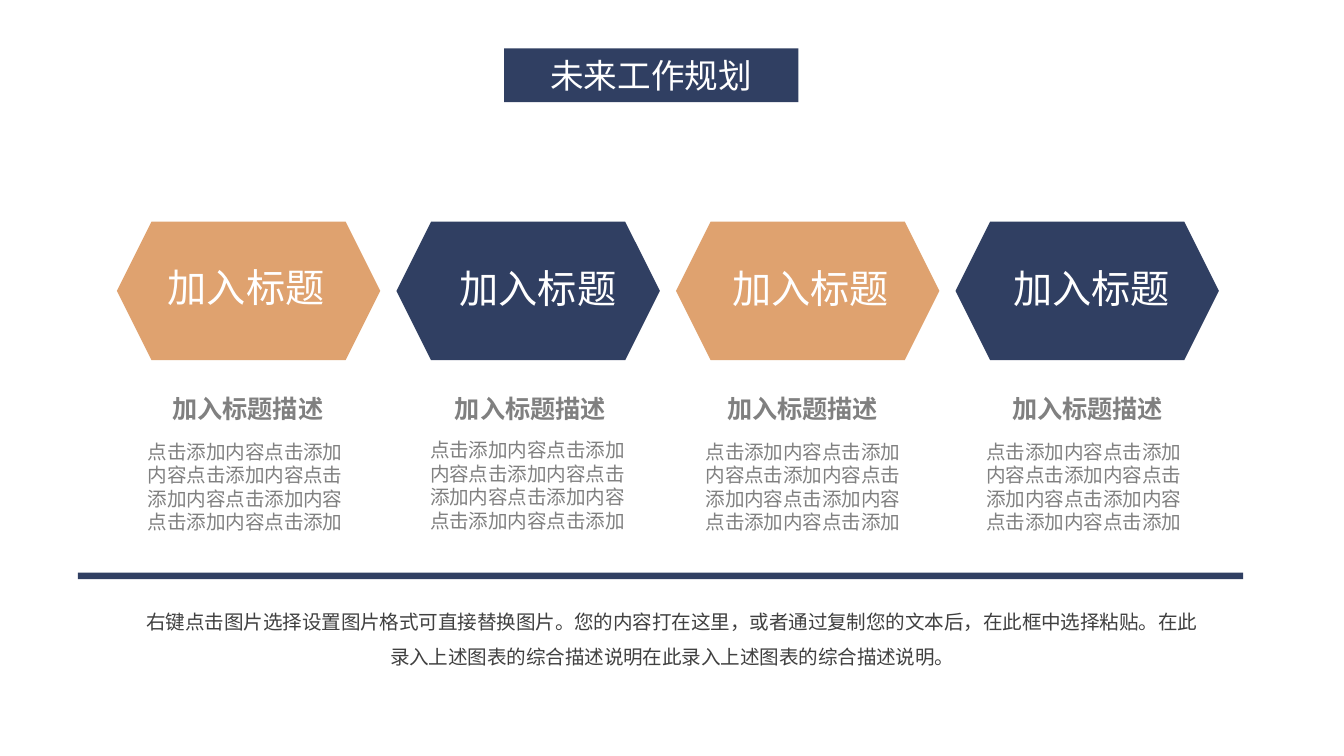
from lxml import etree
from pptx import Presentation
from pptx.dml.color import RGBColor
from pptx.enum.shapes import MSO_SHAPE
from pptx.enum.text import MSO_ANCHOR, MSO_AUTO_SIZE, PP_ALIGN
from pptx.oxml.ns import qn
from pptx.util import Inches, Pt

RECTANGLE, HEXAGON = MSO_SHAPE.RECTANGLE, MSO_SHAPE.HEXAGON
TOP, MIDDLE = MSO_ANCHOR.TOP, MSO_ANCHOR.MIDDLE
LEFT, CENTER = PP_ALIGN.LEFT, PP_ALIGN.CENTER
NO_AUTOFIT = MSO_AUTO_SIZE.NONE

COLORS = {
    "navy": "303F62",
    "orange": "DFA26F",
    "white": "FFFFFF",
    "gray": "808080",
    "dark": "404040",
}
CJK_FONT = "Noto Sans CJK SC"

SLIDE_WIDTH = 10
SLIDE_HEIGHT = SLIDE_WIDTH * 9 / 16

STEP_COUNT = 4
STEP_LEFT, STEP_PITCH = 0.87, 2.08
STEP_FILLS = ("orange", "navy")
LABEL_SPOTS = ((1.15, 1.91), (3.32, 1.92), (5.35, 1.92), (7.44, 1.92))
HEADING_SPANS = ((0.99, 1.71), (2.49, 2.91), (4.5, 2.94), (7.17, 1.84))
DETAIL_SPOTS = ((0.92, 3.2), (3.02, 3.19), (5.07, 3.2), (7.16, 3.2))

TITLE = "未来工作规划"
LABEL = "加入标题"
HEADING = "加入标题描述"
DETAIL = "点击添加内容" * 6 + "点击添加"
SUMMARY = (
    "右键点击图片选择设置图片格式可直接替换图片。"
    "您的内容打在这里，或者通过复制您的文本后，在此框中选择粘贴。"
    "在此录入上述图表的综合描述说明在此录入上述图表的综合描述说明。"
)


def write_text(frame, text, size, color, line, font=CJK_FONT, bold=False,
               align=CENTER, anchor=TOP, wrap=True, insets=(0.1, 0.05)):
    frame.auto_size = NO_AUTOFIT
    frame.word_wrap = wrap
    frame.vertical_anchor = anchor
    frame.margin_left = frame.margin_right = Inches(insets[0])
    frame.margin_top = frame.margin_bottom = Inches(insets[1])
    paragraph = frame.paragraphs[0]
    paragraph.alignment = align
    paragraph.line_spacing = Pt(line)
    run = paragraph.add_run()
    run.text = text
    run.font.size = Pt(size)
    run.font.bold = bold
    run.font.name = font
    run.font.color.rgb = RGBColor.from_string(COLORS[color])
    east_asian = etree.SubElement(run.font._element, qn("a:ea"))
    east_asian.set("typeface", CJK_FONT)


class SlideBuilder:
    def __init__(self, slide):
        self.slide = slide

    def title(self, text, box):
        title = self.slide.shapes.title
        title.left, title.top, title.width, title.height = map(Inches, box)
        title.fill.solid()
        title.fill.fore_color.rgb = RGBColor.from_string(COLORS["navy"])
        write_text(title.text_frame, text, 18, "white", 21.6,
                   font="Arial", anchor=MIDDLE)

    def block(self, preset, box, color):
        block = self.slide.shapes.add_shape(preset, *map(Inches, box))
        block.shadow.inherit = False
        block.fill.solid()
        block.fill.fore_color.rgb = RGBColor.from_string(COLORS[color])
        block.line.fill.background()

    def text(self, text, box, **style):
        caption = self.slide.shapes.add_textbox(*map(Inches, box))
        write_text(caption.text_frame, text, **style)


def main():
    deck = Presentation()
    deck.slide_width, deck.slide_height = Inches(SLIDE_WIDTH), Inches(SLIDE_HEIGHT)
    builder = SlideBuilder(deck.slides.add_slide(deck.slide_layouts[5]))

    builder.title(TITLE, (3.75, 0.36, 2.19, 0.4))
    for step in range(STEP_COUNT):
        hexagon_left = STEP_LEFT + step * STEP_PITCH
        heading_left, heading_width = HEADING_SPANS[step]
        builder.block(HEXAGON, (hexagon_left, 1.65, 1.96, 1.03),
                      STEP_FILLS[step % len(STEP_FILLS)])
        builder.text(LABEL, (*LABEL_SPOTS[step], 1.38, 0.45), size=21,
                     color="white", line=25.2, align=LEFT, wrap=False)
        builder.text(HEADING, (heading_left, 2.85, heading_width, 0.38),
                     size=13.5, color="gray", line=16.4, bold=True,
                     insets=(0.15, 0.07))
        builder.text(DETAIL, (*DETAIL_SPOTS[step], 1.81, 0.86),
                     size=10.5, color="gray", line=12.6, insets=(0.15, 0.07))

    builder.block(RECTANGLE, (0.58, 4.26, 8.67, 0.05), "navy")
    builder.text(SUMMARY, (0.99, 4.41, 8.03, 0.61), size=10.5, color="dark",
                 line=18.8, insets=(0.07, 0.04))
    deck.save("out.pptx")


if __name__ == "__main__":
    main()
